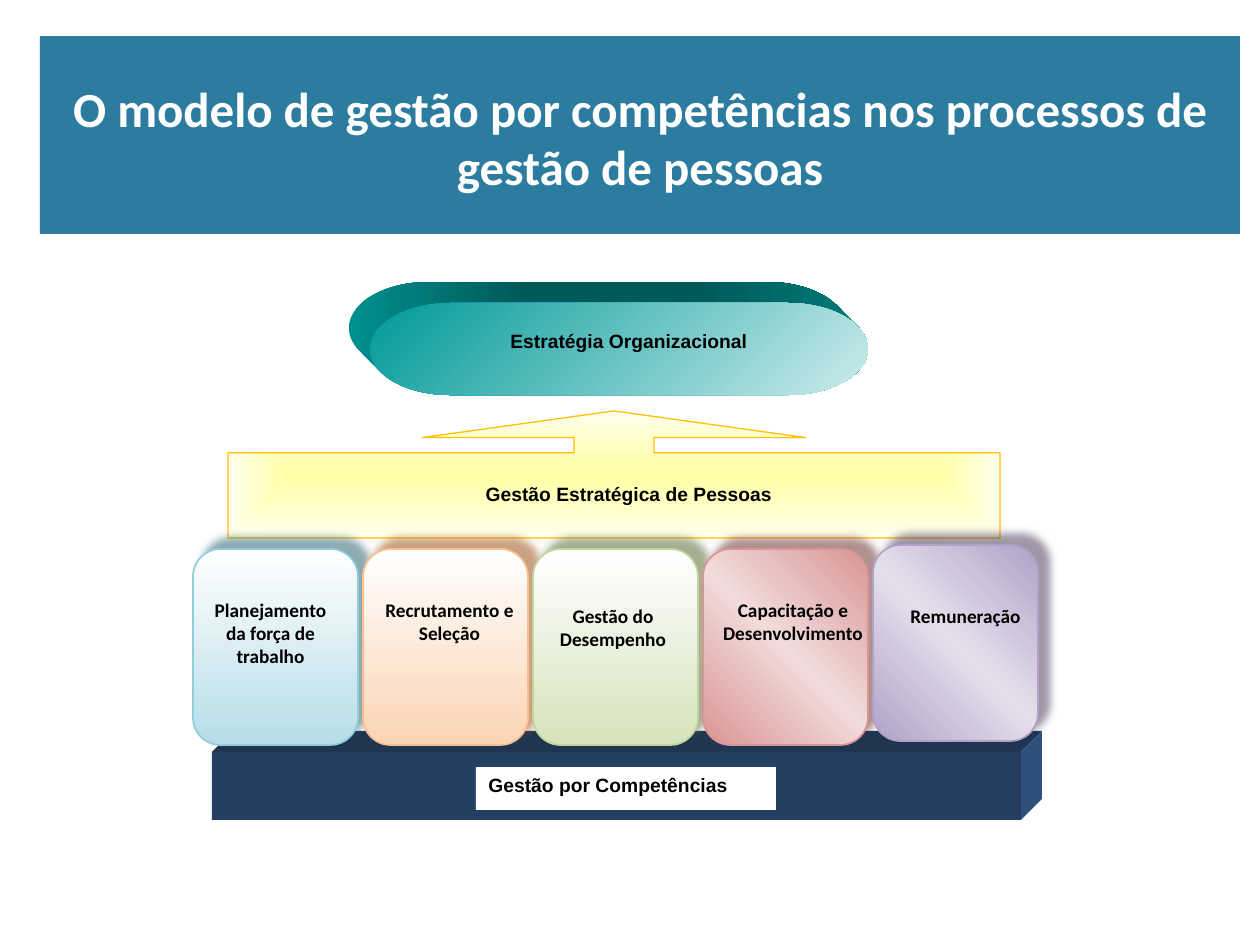
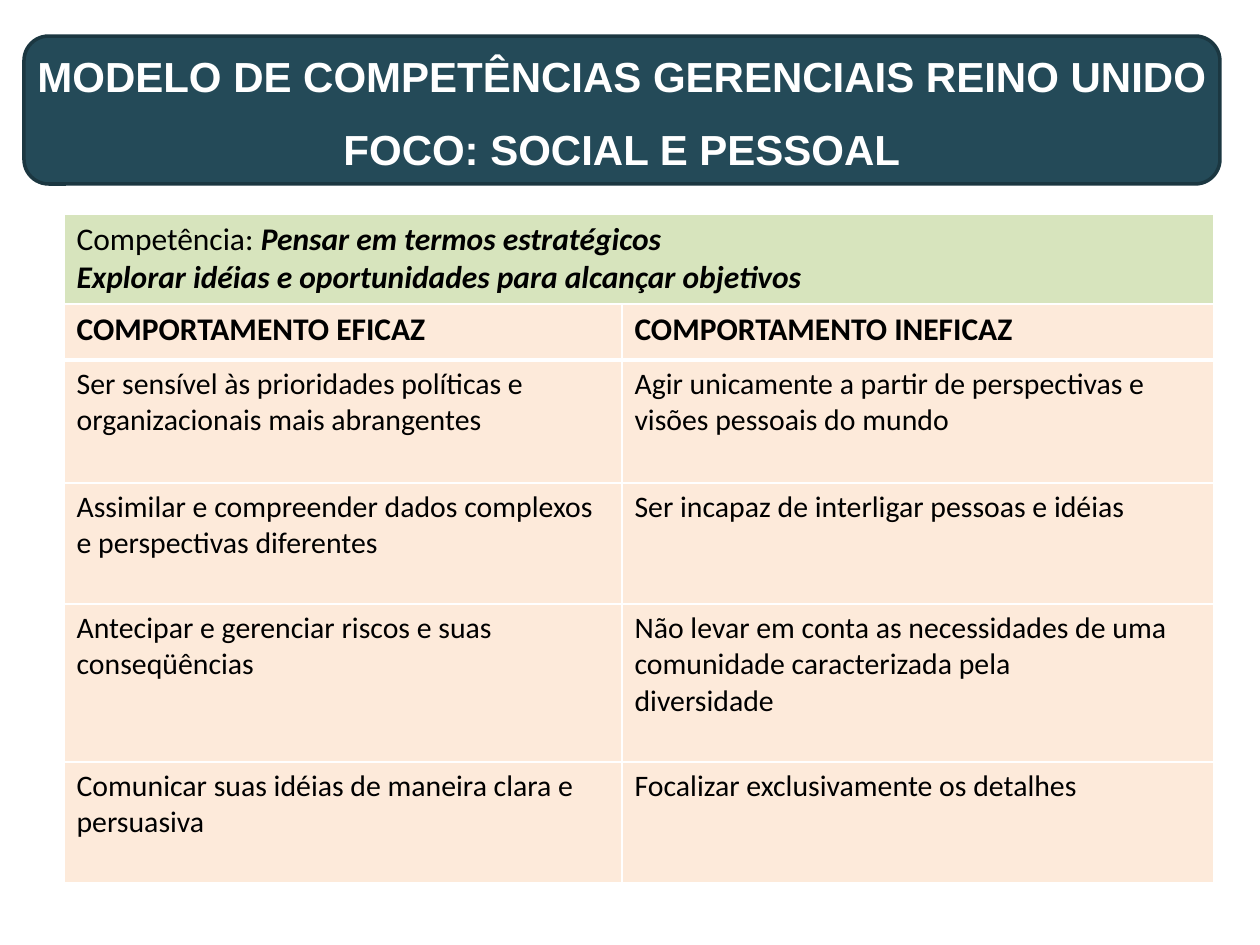
from dataclasses import dataclass
from math import cos, pi, sin

from pptx import Presentation
from pptx.dml.color import RGBColor
from pptx.enum.shapes import MSO_SHAPE as Preset
from pptx.enum.text import MSO_ANCHOR as Anchor, PP_ALIGN as Align
from pptx.oxml import parse_xml
from pptx.oxml.ns import nsdecls, qn
from pptx.util import Pt

PX_PER_INCH = 126


@dataclass(frozen=True)
class Theme:
    heading: str = "Arial"
    body: str = "Calibri"
    white: str = "FFFFFF"
    black: str = "000000"
    process_band: str = "2C7C9F"
    model_band: str = "244A58"
    model_edge: str = "1B3741"
    base_front: str = "243F61"
    base_top: str = "1F3552"
    base_side: str = "2C507B"
    arrow_edge: str = "FFC000"
    arrow_stops: tuple = ("FFFFA3", "FFFFED")
    strategy_stops: tuple = ("009999", "CCEBEB")
    strategy_depth_stops: tuple = ("008F8F", "005A5A", "005A5A", "007A7A")
    competence: str = "D7E4BD"
    behaviour: str = "FDEADA"
    process_title: int = 28
    model_title: int = 24
    table_head: int = 18
    table_body: int = 17
    label: int = 11


THEME = Theme()


@dataclass(frozen=True)
class Box:
    x: int
    y: int
    w: int
    h: int

    def at(self, dx, dy, w, h):
        """Give a box placed relative to this one."""
        return Box(self.x + dx, self.y + dy, w, h)

    def emu(self):
        return [px(value) for value in (self.x, self.y, self.w, self.h)]


@dataclass(frozen=True)
class Card:
    text: str
    stops: tuple
    angle: int
    edge: str
    shadow: str
    label: tuple
    lift: int = 0


CARDS = (
    Card("Planejamento da força de trabalho", ("FFFFFF", "B6DDE8"), 90,
         "92CDDC", "205867", (0, 43, 155, 93)),
    Card("Recrutamento e Seleção", ("FFFFFF", "FBD4B4"), 90,
         "FABF8F", "974706", (9, 43, 155, 60)),
    Card("Gestão do Desempenho", ("FFFFFF", "D6E3BC"), 90,
         "C2D69B", "4E6128", (7, 49, 146, 93)),
    Card("Capacitação e Desenvolvimento", ("D99594", "F2DBDB", "D99594"), 315,
         "D99594", "622423", (0, 43, 180, 71)),
    Card("Remuneração", ("B2A1C7", "E5DFEC", "B2A1C7"), 315,
         "B2A1C7", "3F3151", (15, 53, 155, 54), lift=4),
)

BEHAVIOURS = (
    ("COMPORTAMENTO EFICAZ", "COMPORTAMENTO INEFICAZ"),
    ("Ser sensível às prioridades políticas e organizacionais mais abrangentes",
     "Agir unicamente a partir de perspectivas e visões pessoais do mundo"),
    ("Assimilar e compreender dados complexos e perspectivas diferentes",
     "Ser incapaz de interligar pessoas e idéias"),
    ("Antecipar e gerenciar riscos e suas\nconseqüências",
     "Não levar em conta as necessidades de uma comunidade caracterizada pela\n"
     "diversidade"),
    ("Comunicar suas idéias de maneira clara e persuasiva",
     "Focalizar exclusivamente os detalhes"),
)


def px(value):
    return round(value * 914400 / PX_PER_INCH)


def rgb(color):
    return RGBColor.from_string(color)


def write(frame, text, *, size, font=THEME.body, color=THEME.black, bold=True,
          italic=False, align=Align.LEFT, lead="", gap=0):
    """Write one paragraph a line; lead is a plain run before the first line."""
    for index, line in enumerate(text.split("\n")):
        paragraph = frame.add_paragraph() if index else frame.paragraphs[0]
        paragraph.alignment = align
        if index:
            paragraph.space_before = Pt(gap)
        runs = [(line, bold, italic)]
        if lead and not index:
            runs.insert(0, (lead, False, False))
        for content, is_bold, is_italic in runs:
            run = paragraph.add_run()
            run.text = content
            run.font.name, run.font.size = font, Pt(size)
            run.font.bold, run.font.italic = is_bold, is_italic
            run.font.color.rgb = rgb(color)


def paint_gradient(shape, stops, angle=None):
    """Spread the stops evenly, along an angle or outward from the centre."""
    last = len(stops) - 1
    marks = "".join(
        f'<a:gs pos="{round(100000 * i / last)}"><a:srgbClr val="{color}"/></a:gs>'
        for i, color in enumerate(stops))
    if angle is None:
        course = ('<a:path path="rect"><a:fillToRect l="50000" t="50000" '
                  'r="50000" b="50000"/></a:path>')
    else:
        course = f'<a:lin ang="{angle * 60000}" scaled="0"/>'
    shape.fill.gradient()
    properties = shape._element.spPr
    properties.replace(properties.find(qn("a:gradFill")), parse_xml(
        f'<a:gradFill {nsdecls("a")} rotWithShape="1">'
        f'<a:gsLst>{marks}</a:gsLst>{course}</a:gradFill>'))


def style(shape, fill, edge=None, width=1, angle=None):
    """Fill with one colour, or with a gradient if fill is a tuple."""
    if isinstance(fill, tuple):
        paint_gradient(shape, fill, angle)
    else:
        shape.fill.solid()
        shape.fill.fore_color.rgb = rgb(fill)
    if edge:
        shape.line.color.rgb = rgb(edge)
        shape.line.width = Pt(width)
    else:
        shape.line.fill.background()
    shape.shadow.inherit = False
    return shape


def add_preset(slide, preset, box, fill, **look):
    return style(slide.shapes.add_shape(preset, *box.emu()), fill, **look)


def add_polygon(slide, points, fill, **look):
    corners = [(px(x), px(y)) for x, y in points]
    builder = slide.shapes.build_freeform(*corners[0], scale=1.0)
    builder.add_line_segments(corners[1:], close=True)
    return style(builder.convert_to_shape(), fill, **look)


def add_label(slide, box, text, **text_format):
    frame = slide.shapes.add_textbox(*box.emu()).text_frame
    frame.word_wrap = True
    write(frame, text, size=THEME.label, **text_format)


def cast_shadow(shape, color):
    effects = shape._element.spPr.find(qn("a:effectLst"))
    effects.append(parse_xml(
        f'<a:outerShdw {nsdecls("a")} blurRad="{Pt(5)}" dist="{Pt(8.5)}" '
        f'dir="{315 * 60000}" algn="ctr" rotWithShape="0">'
        f'<a:srgbClr val="{color}"><a:alpha val="50000"/></a:srgbClr></a:outerShdw>'))


def draw_title(slide, box, preset, text, *, wrap, anchor, top=6, edge=None,
               fill, **text_format):
    band = add_preset(slide, preset, box, fill, edge=edge, width=2)
    frame = band.text_frame
    frame.word_wrap, frame.vertical_anchor = wrap, anchor
    frame.margin_top = px(top)
    write(frame, text, color=THEME.white, align=Align.CENTER, **text_format)


def draw_base(slide, box, depth=21):
    """Draw a slab whose top and right sides recede by depth."""
    right, bottom = box.x + box.w, box.y + box.h
    add_preset(slide, Preset.RECTANGLE, box, THEME.base_front)
    add_polygon(slide, [(box.x, box.y), (box.x + depth, box.y - depth),
                        (right + depth, box.y - depth), (right, box.y)],
                THEME.base_top)
    add_polygon(slide, [(right, box.y), (right + depth, box.y - depth),
                        (right + depth, bottom - depth), (right, bottom)],
                THEME.base_side)
    plate = add_preset(slide, Preset.RECTANGLE, box.at(264, 15, 300, 43), THEME.white)
    plate.text_frame.vertical_anchor = Anchor.TOP
    write(plate.text_frame, "Gestão por Competências", size=THEME.label,
          font=THEME.heading)


def draw_strategy(slide, box, depth=21):
    """Draw a pill extruded up and to the left by depth."""
    radius_x, radius_y = box.w * 0.16, box.h / 2
    outline = []
    for step in range(120):
        dx, dy = cos(step * pi / 60), sin(step * pi / 60)
        center_x = box.x + (box.w - radius_x if dx > 0 else radius_x)
        shift = depth if dx / radius_x + dy / radius_y < 0 else 0
        outline.append((center_x + radius_x * dx - shift,
                        box.y + radius_y * (1 + dy) - shift))
    add_polygon(slide, outline, THEME.strategy_depth_stops, angle=0)
    add_preset(slide, Preset.FLOWCHART_TERMINATOR, box, THEME.strategy_stops, angle=45)
    add_label(slide, box.at(75, 20, 368, 43), "Estratégia Organizacional",
              font=THEME.heading, align=Align.CENTER)


def draw_arrow(slide, box):
    arrow = add_preset(slide, Preset.UP_ARROW_CALLOUT, box, THEME.arrow_stops,
                       edge=THEME.arrow_edge, width=0.75)
    for index, value in enumerate((0.63, 1.51, 0.21, 0.67)):
        arrow.adjustments[index] = value
    add_label(slide, box.at(217, 65, 368, 43), "Gestão Estratégica de Pessoas",
              font=THEME.heading, align=Align.CENTER)


def draw_cards(slide, box, pitch=170, width=165):
    for index, card in enumerate(CARDS):
        place = box.at(index * pitch, -card.lift, width, box.h)
        shape = add_preset(slide, Preset.ROUNDED_RECTANGLE, place, card.stops,
                           edge=card.edge, angle=card.angle)
        cast_shadow(shape, card.shadow)
        add_label(slide, place.at(*card.label), card.text, align=Align.CENTER)


def set_borders(cell, top=1, bottom=1):
    properties = cell._tc.get_or_add_tcPr()
    sides = (("L", 1), ("R", 1), ("T", top), ("B", bottom))
    for index, (side, width) in enumerate(sides):
        properties.insert(index, parse_xml(
            f'<a:ln{side} {nsdecls("a")} w="{Pt(width)}"><a:solidFill>'
            f'<a:srgbClr val="{THEME.white}"/></a:solidFill></a:ln{side}>'))


def add_plain_table(slide, box, widths, heights):
    table = slide.shapes.add_table(len(heights), len(widths), *box.emu()).table
    table.first_row = table.horz_banding = False
    for column, width in zip(table.columns, widths):
        column.width = px(width)
    for row, height in zip(table.rows, heights):
        row.height = px(height)
    return table


def fill_cell(cell, text, fill, *, top=1, bottom=1, **text_format):
    cell.fill.solid()
    cell.fill.fore_color.rgb = rgb(fill)
    set_borders(cell, top, bottom)
    write(cell.text_frame, text, **text_format)


def draw_competence(slide, box):
    table = add_plain_table(slide, box, [box.w], [box.h])
    fill_cell(table.cell(0, 0), " Pensar em termos estratégicos\n"
              "Explorar idéias e oportunidades para alcançar objetivos",
              THEME.competence, lead="Competência:", italic=True,
              size=THEME.table_head)


def draw_behaviours(slide, box):
    table = add_plain_table(slide, box, (558, box.w - 558), (56, 123, 121, 158, 121))
    for row, texts in enumerate(BEHAVIOURS):
        head = row == 0
        for column, text in enumerate(texts):
            fill_cell(table.cell(row, column), text, THEME.behaviour,
                      top=3 if row == 1 else 1, bottom=3 if head else 1,
                      size=THEME.table_head if head else THEME.table_body, bold=head)


def build_process_slide(slide):
    draw_title(slide, Box(40, 36, 1200, 198), Preset.RECTANGLE,
               "O modelo de gestão por competências nos processos de gestão de pessoas",
               wrap=True, anchor=Anchor.TOP, top=42, fill=THEME.process_band,
               size=THEME.process_title)
    draw_base(slide, Box(212, 752, 809, 68))
    draw_arrow(slide, Box(228, 411, 772, 127))
    draw_strategy(slide, Box(370, 303, 498, 92))
    draw_cards(slide, Box(193, 549, 845, 196))


def build_model_slide(slide):
    draw_title(slide, Box(24, 36, 1196, 148), Preset.FLOWCHART_ALTERNATE_PROCESS,
               "MODELO DE COMPETÊNCIAS GERENCIAIS REINO UNIDO\nFOCO: SOCIAL E PESSOAL",
               wrap=False, anchor=Anchor.MIDDLE, top=10, fill=THEME.model_band,
               edge=THEME.model_edge, size=THEME.model_title, font=THEME.heading,
               gap=13)
    draw_competence(slide, Box(64, 214, 1150, 90))
    draw_behaviours(slide, Box(64, 304, 1150, 579))


def main():
    presentation = Presentation()
    presentation.slide_width, presentation.slide_height = px(1260), px(945)
    blank = presentation.slide_layouts[6]
    for build in (build_process_slide, build_model_slide):
        build(presentation.slides.add_slide(blank))
    presentation.save("out.pptx")


if __name__ == "__main__":
    main()
